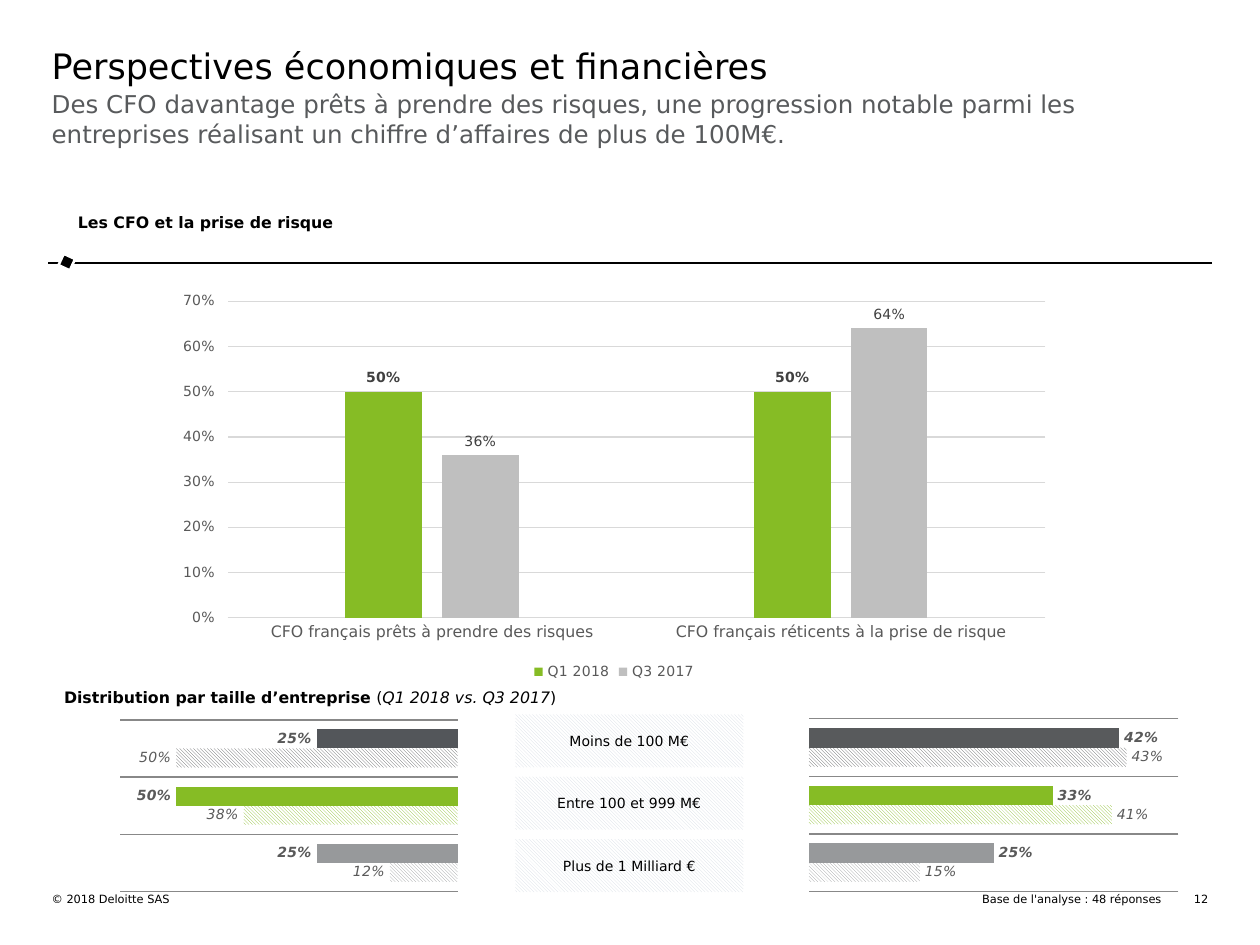
from lxml import etree
from pptx import Presentation
from pptx.chart.data import CategoryChartData
from pptx.dml.color import RGBColor
from pptx.enum.chart import XL_CHART_TYPE, XL_LABEL_POSITION, XL_LEGEND_POSITION, XL_TICK_MARK
from pptx.enum.dml import MSO_PATTERN
from pptx.enum.shapes import MSO_CONNECTOR, MSO_SHAPE
from pptx.enum.text import MSO_ANCHOR, PP_ALIGN
from pptx.oxml.ns import qn
from pptx.util import Inches, Pt

WIDE, HIGH = Inches(10), Inches(7.5)
FONT = "DejaVu Sans"
BLACK = RGBColor(0, 0, 0)
WHITE = RGBColor(255, 255, 255)
GREEN = RGBColor(0x86, 0xBC, 0x25)
SLATE = RGBColor(0x58, 0x5A, 0x5C)
STEEL = RGBColor(0x53, 0x56, 0x5A)
GREY = RGBColor(0x97, 0x99, 0x9B)
SILVER = RGBColor(0xBF, 0xBF, 0xBF)
RULE = RGBColor(0xD9, 0xD9, 0xD9)
EDGE = RGBColor(0x88, 0x88, 0x88)
LABEL = RGBColor(0x59, 0x59, 0x59)
VALUE = RGBColor(0x40, 0x40, 0x40)
MIST = RGBColor(0xD6, 0xDC, 0xE5)
COLUMN, BAR = XL_CHART_TYPE.COLUMN_CLUSTERED, XL_CHART_TYPE.BAR_CLUSTERED
OUTSIDE = XL_LABEL_POSITION.OUTSIDE_END
BOTTOM = XL_LEGEND_POSITION.BOTTOM
NONE = XL_TICK_MARK.NONE
DARK, LIGHT = MSO_PATTERN.DARK_DOWNWARD_DIAGONAL, MSO_PATTERN.LIGHT_DOWNWARD_DIAGONAL
RECT, STRAIGHT = MSO_SHAPE.RECTANGLE, MSO_CONNECTOR.STRAIGHT
TOP, MIDDLE = MSO_ANCHOR.TOP, MSO_ANCHOR.MIDDLE
LEFT, CENTER, RIGHT = PP_ALIGN.LEFT, PP_ALIGN.CENTER, PP_ALIGN.RIGHT


def place(x, y, w, h):
    return [round(share * size / 100)
            for share, size in zip((x, y, w, h), (WIDE, HIGH, WIDE, HIGH))]


def style(font, size, color, bold=False, italic=False):
    font.name, font.size = FONT, Pt(size)
    font.bold, font.italic = bold, italic
    font.color.rgb = color


def write(shape, runs, size, color=BLACK, align=LEFT, anchor=TOP, pad=(0, 0)):
    frame = shape.text_frame
    frame.word_wrap = True
    frame.vertical_anchor = anchor
    frame.margin_left = frame.margin_right = Inches(pad[0])
    frame.margin_top = frame.margin_bottom = Inches(pad[1])
    line = frame.paragraphs[0]
    line.alignment = align
    for text, bold, italic in runs:
        run = line.add_run()
        run.text = text
        style(run.font, size, color, bold, italic)


def add_text(slide, box, runs, size, **look):
    write(slide.shapes.add_textbox(*place(*box)), runs, size, **look)


def hatch(fill, pattern, color):
    fill.patterned()
    fill.pattern = pattern
    fill.fore_color.rgb = color
    fill.back_color.rgb = WHITE


def paint(fill, color):
    fill.solid()
    fill.fore_color.rgb = color


def add_rule(slide):
    left, y, width, _ = place(3.8, 27.87, 92.4, 0)
    rule = slide.shapes.add_connector(STRAIGHT, left + width, y, left, y)
    rule.line.color.rgb = BLACK
    rule.line.width = Pt(1)
    etree.SubElement(rule._element.spPr, qn("a:effectLst"))
    mark = slide.shapes.add_shape(RECT, *place(4.8, 27.07, 1, 1.33))
    mark.rotation = 114.8
    mark.shadow.inherit = False
    paint(mark.fill, BLACK)
    mark.line.color.rgb = WHITE
    mark.line.width = Pt(1.5)


def add_chart(slide, kind, box, cats, rows, gap, lap):
    data = CategoryChartData(number_format="0%")
    data.categories = cats
    for name, vals in rows:
        data.add_series(name, vals)
    chart = slide.shapes.add_chart(kind, *place(*box), data).chart
    chart.has_title = chart.has_legend = False
    style(chart.font, 9, BLACK)
    plot = chart.plots[0]
    plot.vary_by_categories = False
    plot.gap_width, plot.overlap = gap, lap
    return chart


def label(series, color, bold, italic):
    tags = series.data_labels
    tags.show_value = True
    tags.position = OUTSIDE
    tags.number_format = "0%"
    tags.number_format_is_linked = False
    style(tags.font, 8, color, bold, italic)


def rule_grid(axis, color):
    axis.has_major_gridlines = True
    axis.major_gridlines.format.line.color.rgb = color
    axis.major_gridlines.format.line.width = Pt(0.75)


def add_columns(slide):
    cats = ["CFO français prêts à prendre des risques",
            "CFO français réticents à la prise de risque"]
    rows = [("Q1 2018", (0.5, 0.5)), ("Q3 2017", (0.36, 0.64))]
    chart = add_chart(slide, COLUMN, (13.1, 30.13, 71.3, 42.4), cats, rows, 309, -27)
    for series, color, bold in zip(chart.plots[0].series, (GREEN, SILVER), (True, False)):
        paint(series.format.fill, color)
        label(series, VALUE, bold, False)
    base, scale = chart.category_axis, chart.value_axis
    base.major_tick_mark = NONE
    base.format.line.color.rgb = RULE
    base.format.line.width = Pt(0.75)
    style(base.tick_labels.font, 9, LABEL)
    scale.minimum_scale, scale.maximum_scale, scale.major_unit = 0, 0.7, 0.1
    scale.format.line.fill.background()
    style(scale.tick_labels.font, 8, LABEL)
    scale.tick_labels.number_format = "0%"
    scale.tick_labels.number_format_is_linked = False
    rule_grid(scale, RULE)
    chart.has_legend = True
    chart.legend.position = BOTTOM
    chart.legend.include_in_layout = False
    style(chart.legend.font, 8, LABEL)


def set_plot(chart, area):
    plot = chart._chartSpace.chart.plotArea
    for old in plot.findall(qn("c:layout")):
        plot.remove(old)
    layout = etree.Element(qn("c:layout"))
    plot.insert(0, layout)
    manual = etree.SubElement(layout, qn("c:manualLayout"))
    parts = [("layoutTarget", "inner"), ("xMode", "edge"), ("yMode", "edge")]
    for tag, val in parts + list(zip("xywh", area)):
        etree.SubElement(manual, qn(f"c:{tag}")).set("val", str(val))


def add_bars(slide, x, new, old, first, top, area, flip):
    rows = [("Series 1", new), ("Series 2", old)]
    chart = add_chart(slide, BAR, (x, 76, 36.2, 18.4), ["1", "2", "3"], rows, 100, 0)
    now, past = chart.plots[0].series
    for i, color in enumerate((first, GREEN, GREY)):
        paint(now.points[i].format.fill, color)
    for i, color in enumerate((SLATE, GREEN, GREY)):
        hatch(past.points[i].format.fill, DARK, color)
    label(now, LABEL, True, True)
    label(past, LABEL, False, True)
    base, scale = chart.category_axis, chart.value_axis
    base.visible = scale.visible = False
    base.reverse_order = True
    scale.reverse_order = flip
    scale.minimum_scale, scale.maximum_scale = 0, top
    scale.has_major_gridlines = False
    rule_grid(base, EDGE)
    set_plot(chart, area)


def add_sizes(slide):
    for row, text in enumerate(("Moins de 100 M€", "Entre 100 et 999 M€", "Plus de 1 Milliard €")):
        card = slide.shapes.add_shape(RECT, *place(40.9, 75.6 + 6.6 * row, 18.1, 5.6))
        card.shadow.inherit = False
        card.line.fill.background()
        hatch(card.fill, LIGHT, MIST)
        write(card, [(text, False, False)], 8, align=CENTER, anchor=MIDDLE, pad=(0.1, 0.05))


def main():
    deck = Presentation()
    deck.slide_width, deck.slide_height = WIDE, HIGH
    slide = deck.slides.add_slide(deck.slide_layouts[5])
    title = slide.shapes.title
    title.left, title.top, title.width, title.height = place(4.1, 4.67, 91.6, 4.93)
    write(title, [("Perspectives économiques et financières", False, False)], 20)
    add_rule(slide)
    lead = ("Des CFO davantage prêts à prendre des risques, une progression notable parmi "
            "les entreprises réalisant un chiffre d’affaires de plus de 100M€.")
    add_text(slide, (4.1, 9.47, 91.8, 11.07), [(lead, False, False)], 14, color=SLATE)
    add_text(slide, (5.2, 22, 90.7, 3.33), [("Les CFO et la prise de risque", True, False)],
             9, pad=(0.1, 0.04))
    add_columns(slide)
    add_text(slide, (4.1, 72.27, 43.9, 3.07),
             [("Distribution par taille d’entreprise ", True, False), ("(", False, False),
              ("Q1 2018 vs. Q3 2017", False, True), (")", False, False)],
             9, anchor=MIDDLE, pad=(0.1, 0.05))
    add_bars(slide, 4.1, (0.25, 0.5, 0.25), (0.5, 0.38, 0.12), STEEL, 0.6,
             (0.15, 0.01, 0.74, 0.99), True)
    add_bars(slide, 59.5, (0.42, 0.33, 0.25), (0.43, 0.41, 0.15), SLATE, 0.5,
             (0.13, 0, 0.81, 1), False)
    add_sizes(slide)
    for x, w, text, align in ((4.1, 43.9, "© 2018 Deloitte SAS", LEFT),
                              (52, 40.2, "Base de l'analyse : 48 réponses", RIGHT),
                              (93.4, 2.5, "12", RIGHT)):
        add_text(slide, (x, 94.4, w, 1.47), [(text, False, False)], 6.5, align=align)
    deck.save("out.pptx")


if __name__ == "__main__":
    main()
